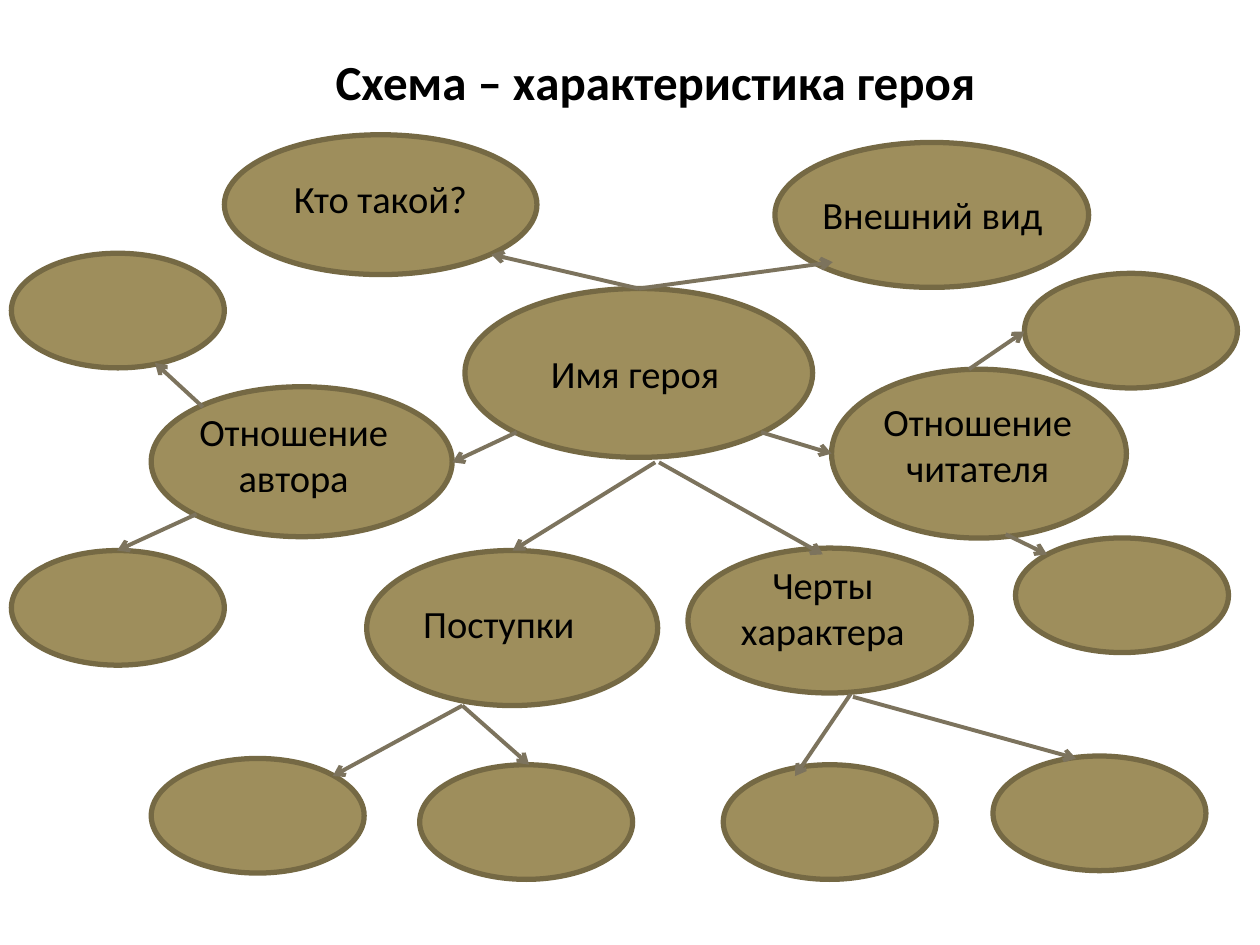
from lxml import etree
from pptx import Presentation
from pptx.dml.color import RGBColor
from pptx.enum import shapes as sh, text as tx
from pptx.oxml.ns import qn
from pptx.util import Pt

HUES = {"oval": "9E8E5C", "edge": "756944", "arrow": "7C735D", "text": "000000"}
FONT = "Calibri"
TITLE = "Схема – характеристика героя"

# label, oval (left, top, width, height), label corner (left, top), label lines
TOPICS = [
    ("Имя героя", (265.7, 164.9, 198.7, 96.5), (283.7, 196.6), 1),
    ("Отношение автора", (86.4, 221, 172, 85.7), (88.6, 229.7), 2),
    ("Кто такой?", (128.2, 77, 178.6, 79.9), (138.2, 96.5), 1),
    ("Черты характера", (393.1, 313.2, 162, 82.8), (391, 316.8), 2),
    ("Поступки", (209.5, 314.6, 166.3, 88.6), (205.9, 339.1), 1),
    ("Отношение читателя", (475.2, 211, 168.5, 96.5), (479.5, 223.9), 2),
    ("Внешний вид", (442.8, 81.4, 179.3, 82.8), (453.6, 105.8), 1),
]
LABEL_W, LABEL_H, LINE_H = 158.4, 33.8, 26.7

# empty ovals of one size
BLANK = (121.7, 65.5)
SPOTS = [
    (86.4, 433.4), (239.8, 437), (413.3, 437), (567.4, 432),
    (585.4, 156.2), (6.5, 314.6), (6.5, 144.7), (580.3, 307.4),
]

# start point, then the points its arrows lead to
ARROWS = [
    ((365, 164.9), [(280.8, 145.4), (475.9, 149.8)]),
    ((295.2, 247), [(258.5, 264.2)]),
    ((434.9, 247), [(475.2, 259.2)]),
    ((374.4, 264.2), [(293, 314.6)]),
    ((376.6, 264.2), [(470.2, 316.8)]),
    ((115.9, 232.6), [(88.6, 207.4)]),
    ((112.3, 293.8), [(67, 314.6)]),
    ((553.7, 211), [(585.4, 189.4)]),
    ((574.6, 305.3), [(598.3, 316.8)]),
    ((264.2, 403.2), [(302.4, 437), (190.1, 443.5)]),
    ((486, 396.7), [(454.3, 443.5)]),
    ((487.4, 398.2), [(614.9, 433.4)]),
]


def hue(name):
    return RGBColor.from_string(HUES[name])


def pts(*nums):
    return [Pt(n) for n in nums]


def write(frame, words, size, bold=False):
    frame.word_wrap = True
    para = frame.paragraphs[0]
    para.alignment = tx.PP_ALIGN.CENTER
    run = para.add_run()
    run.text = words
    font = run.font
    font.name, font.size, font.bold = FONT, Pt(size), bold
    font.color.rgb = hue("text")


def add_oval(slide, box):
    oval = slide.shapes.add_shape(sh.MSO_SHAPE.OVAL, *pts(*box))
    oval.shadow.inherit = False
    oval.fill.solid()
    oval.fill.fore_color.rgb = hue("oval")
    oval.line.color.rgb = hue("edge")
    oval.line.width = Pt(3)


def add_label(slide, words, spot, rows):
    high = LABEL_H + (rows - 1) * LINE_H
    box = slide.shapes.add_textbox(*pts(*spot, LABEL_W, high))
    write(box.text_frame, words, 22)


def add_arrow(slide, start, end):
    line = slide.shapes.add_connector(
        sh.MSO_CONNECTOR.STRAIGHT, *pts(*start, *end))
    line.line.color.rgb = hue("arrow")
    line.line.width = Pt(2.25)
    props = line._element.spPr
    etree.SubElement(props.find(qn("a:ln")), qn("a:tailEnd"), type="arrow")
    etree.SubElement(props, qn("a:effectLst"))


def main():
    deck = Presentation()
    deck.slide_width, deck.slide_height = pts(720, 540)
    slide = deck.slides.add_slide(deck.slide_layouts[5])

    title = slide.shapes.title
    title.left, title.top, title.width, title.height = pts(59.8, 25.9, 629.3, 41)
    title.text_frame.vertical_anchor = tx.MSO_ANCHOR.TOP
    write(title.text_frame, TITLE, 28, bold=True)

    for _, box, _, _ in TOPICS:
        add_oval(slide, box)
    for words, _, spot, rows in TOPICS:
        add_label(slide, words, spot, rows)
    for spot in SPOTS:
        add_oval(slide, spot + BLANK)
    for start, ends in ARROWS:
        for end in ends:
            add_arrow(slide, start, end)

    deck.save("out.pptx")


if __name__ == "__main__":
    main()
